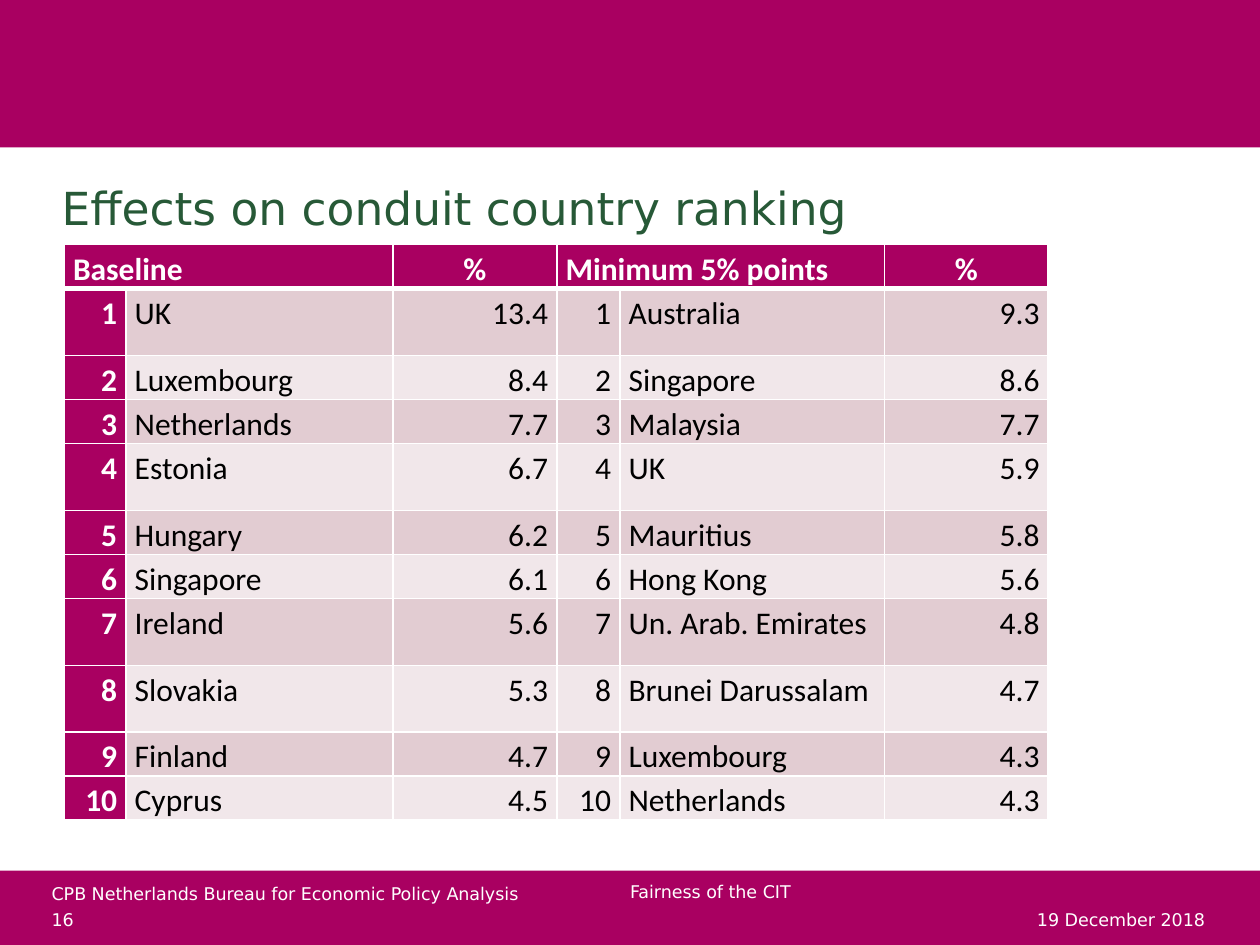
from lxml.etree import SubElement
from pptx import Presentation
from pptx.dml.color import RGBColor
from pptx.enum.shapes import MSO_SHAPE
from pptx.enum.text import MSO_ANCHOR as Anchor, PP_ALIGN as Align
from pptx.oxml import parse_xml
from pptx.oxml.ns import nsdecls, qn
from pptx.util import Inches, Pt

COLORS = {
    "brand": "A90061",
    "title": "275937",
    "white": "FFFFFF",
    "black": "000000",
    "dark band": "E2CCD2",
    "light band": "F1E7EA",
}
COLUMN_WIDTHS = [0.49, 2.12, 1.3, 0.5, 2.1, 1.3]
HEADER = ["Baseline", "", "%", "Minimum 5% points", "", "%"]
RANKING = [
    ("UK", "13.4", "Australia", "9.3"),
    ("Luxembourg", "8.4", "Singapore", "8.6"),
    ("Netherlands", "7.7", "Malaysia", "7.7"),
    ("Estonia", "6.7", "UK", "5.9"),
    ("Hungary", "6.2", "Mauritius", "5.8"),
    ("Singapore", "6.1", "Hong Kong", "5.6"),
    ("Ireland", "5.6", "Un. Arab. Emirates", "4.8"),
    ("Slovakia", "5.3", "Brunei Darussalam", "4.7"),
    ("Finland", "4.7", "Luxembourg", "4.3"),
    ("Cyprus", "4.5", "Netherlands", "4.3"),
]
TALL_ROWS = {1, 4, 7, 8}
ROW_HEIGHT, TALL_ROW_HEIGHT = 0.35, 0.53


def rgb(name):
    return RGBColor.from_string(COLORS[name])


def write(frame, text, font="DejaVu Sans", size=10, color="white", bold=False,
          align=Align.LEFT, line_spacing=None):
    paragraph = frame.paragraphs[0]
    paragraph.alignment = align
    paragraph.line_spacing = line_spacing
    run = paragraph.add_run()
    run.text = text
    run.font.name = font
    run.font.size = Pt(size)
    run.font.bold = bold
    run.font.color.rgb = rgb(color)


def set_borders(cell, **widths):
    """Draw white borders; the keywords L, R, T, B override the 1 pt width."""
    properties = cell._tc.get_or_add_tcPr()
    for position, side in enumerate("LRTB"):
        width = Pt(widths.get(side, 1))
        line = parse_xml(f'<a:ln{side} {nsdecls("a")} w="{width}"/>')
        fill = SubElement(line, qn("a:solidFill"))
        SubElement(fill, qn("a:srgbClr"), val=COLORS["white"])
        properties.insert(position, line)


class SlideBuilder:
    """Holds the current slide and draws its elements in the house style."""

    def __init__(self, slide):
        self.slide = slide

    def band(self, top, height):
        shape = self.slide.shapes.add_shape(
            MSO_SHAPE.RECTANGLE, 0, Inches(top), Inches(10), Inches(height))
        shape.shadow.inherit = False
        shape.fill.solid()
        shape.fill.fore_color.rgb = rgb("brand")
        shape.line.fill.background()

    def text(self, text, left, top, width, height, anchor=Anchor.TOP,
             insets=(0, 0), **style):
        box = self.slide.shapes.add_textbox(
            Inches(left), Inches(top), Inches(width), Inches(height))
        frame = box.text_frame
        frame.word_wrap = True
        frame.vertical_anchor = anchor
        frame.margin_left = frame.margin_right = Inches(insets[0])
        frame.margin_top = frame.margin_bottom = Inches(insets[1])
        write(frame, text, **style)

    def cell(self, cell, text, fill, **style):
        cell.fill.solid()
        cell.fill.fore_color.rgb = rgb(fill)
        cell.margin_left = cell.margin_right = Inches(0.07)
        cell.margin_top = cell.margin_bottom = 0
        if text:
            write(cell.text_frame, text, font="Calibri", size=18,
                  line_spacing=1.15, **style)

    def ranking_table(self, left, top):
        heights = [TALL_ROW_HEIGHT if row in TALL_ROWS else ROW_HEIGHT
                   for row in range(len(RANKING) + 1)]
        table = self.slide.shapes.add_table(
            len(heights), len(COLUMN_WIDTHS), Inches(left), Inches(top),
            Inches(sum(COLUMN_WIDTHS)), Inches(sum(heights))).table
        table.horz_banding = False
        for column, width in zip(table.columns, COLUMN_WIDTHS):
            column.width = Inches(width)
        for row, height in zip(table.rows, heights):
            row.height = Inches(height)

        for column, text in enumerate(HEADER):
            cell = table.cell(0, column)
            align = Align.CENTER if text == "%" else Align.LEFT
            self.cell(cell, text, "brand", bold=True, align=align)
            set_borders(cell, B=3)
        for first in (0, 3):
            table.cell(0, first).merge(table.cell(0, first + 1))

        for rank, (country, share, new_country, new_share) in enumerate(RANKING, 1):
            values = [str(rank), country, share, str(rank), new_country, new_share]
            band = "dark band" if rank % 2 else "light band"
            for column, text in enumerate(values):
                cell = table.cell(rank, column)
                is_first = column == 0
                self.cell(cell, text, "brand" if is_first else band,
                          color="white" if is_first else "black", bold=is_first,
                          align=Align.LEFT if column in (1, 4) else Align.RIGHT)
                set_borders(cell, T=3 if rank == 1 else 1)


def main():
    presentation = Presentation()
    presentation.slide_width, presentation.slide_height = Inches(10), Inches(7.5)
    builder = SlideBuilder(
        presentation.slides.add_slide(presentation.slide_layouts[6]))
    builder.band(6.91, 0.59)
    builder.band(0, 1.17)
    builder.text("CPB Netherlands Bureau for Economic Policy Analysis",
                 0.41, 7.01, 4.04, 0.17)
    builder.text("Effects on conduit country ranking", 0.39, 1.38, 9.21, 0.63,
                 insets=(0.1, 0.05), size=26, color="title")
    builder.text("19 December 2018", 8.23, 7.2, 1.38, 0.2, anchor=Anchor.MIDDLE)
    builder.text("Fairness of the CIT", 5, 6.99, 3.11, 0.39)
    builder.text("16", 0.41, 7.2, 0.75, 0.2, anchor=Anchor.MIDDLE)
    builder.ranking_table(0.51, 1.94)
    presentation.save("out.pptx")


if __name__ == "__main__":
    main()
